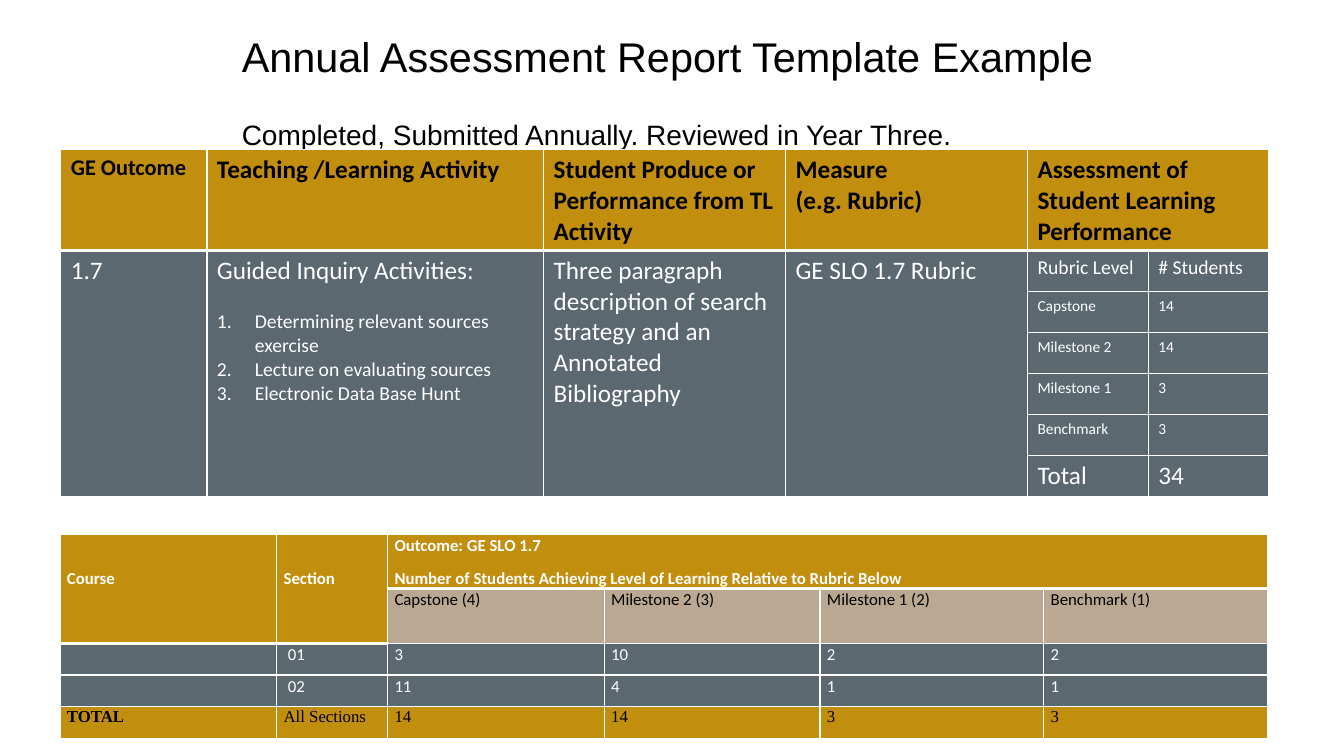
import dataclasses
import typing

import lxml.etree
import pptx
import pptx.dml.color
import pptx.enum.text
import pptx.oxml.ns
import pptx.util

Pt = pptx.util.Pt

GOLD, SLATE, SAND = "C28E0E", "5B6870", "BAA892"
BLACK, WHITE = "000000", "FFFFFF"


@dataclasses.dataclass
class Entry:
    """One table cell; each line of text is a paragraph."""
    row: int
    col: int
    lines: list[str]
    size: float
    fill: str = SLATE
    color: str = WHITE
    bold: bool = False
    font: str = "Calibri"
    rows: int = 1
    cols: int = 1
    steps: list[str] = dataclasses.field(default_factory=list)
    margins: tuple[float, float, float, float] = (7.2, 3.6, 7.2, 3.6)
    line_spacing: float = 1.0
    space_after: float = 0


@dataclasses.dataclass
class Grid:
    left: float
    top: float
    widths: list[float]
    heights: list[float]
    entries: list[Entry]


def rgb(color: str) -> pptx.dml.color.RGBColor:
    return pptx.dml.color.RGBColor.from_string(color)


def style_font(paragraph: typing.Any, name: str, size: float, color: str, bold: bool = False) -> None:
    paragraph.font.name = name
    paragraph.font.size = Pt(size)
    paragraph.font.bold = bold
    paragraph.font.color.rgb = rgb(color)


def add_heading(slide: typing.Any, text: str, left: float, top: float, width: float, height: float,
                size: float, anchor: typing.Any, top_margin: float) -> None:
    frame = slide.shapes.add_textbox(Pt(left), Pt(top), Pt(width), Pt(height)).text_frame
    frame.word_wrap = True
    frame.vertical_anchor = anchor
    frame.margin_top = Pt(top_margin)
    frame.text = text
    style_font(frame.paragraphs[0], "Arial", size, BLACK)


def set_borders(cell: typing.Any, top: float, bottom: float) -> None:
    properties = cell._tc.get_or_add_tcPr()
    for side, width in (("L", 1), ("R", 1), ("T", top), ("B", bottom)):
        line = lxml.etree.SubElement(properties, pptx.oxml.ns.qn(f"a:ln{side}"), w=str(Pt(width)))
        solid = lxml.etree.SubElement(line, pptx.oxml.ns.qn("a:solidFill"))
        lxml.etree.SubElement(solid, pptx.oxml.ns.qn("a:srgbClr"), val=WHITE)


def number_step(paragraph: typing.Any) -> None:
    properties = paragraph._p.get_or_add_pPr()
    properties.set("marL", str(Pt(27)))
    properties.set("indent", str(Pt(-27)))
    numbering = lxml.etree.Element(pptx.oxml.ns.qn("a:buAutoNum"), type="arabicPeriod")
    properties.find(pptx.oxml.ns.qn("a:defRPr")).addprevious(numbering)


def fill_entry(table: typing.Any, entry: Entry) -> None:
    cell = table.cell(entry.row, entry.col)
    if entry.rows * entry.cols > 1:
        cell.merge(table.cell(entry.row + entry.rows - 1, entry.col + entry.cols - 1))
    cell.fill.solid()
    cell.fill.fore_color.rgb = rgb(entry.fill)
    cell.margin_left, cell.margin_top, cell.margin_right, cell.margin_bottom = map(Pt, entry.margins)
    cell.text = "\n".join(entry.lines + entry.steps)
    for index, paragraph in enumerate(cell.text_frame.paragraphs):
        step = index - len(entry.lines)
        is_step = bool(entry.steps) and step >= 0
        paragraph.line_spacing = entry.line_spacing
        paragraph.space_after = Pt(entry.space_after)
        paragraph.space_before = Pt(17 if is_step and step == 0 else 0)
        style_font(paragraph, entry.font, 14 if is_step else entry.size, entry.color, entry.bold)
        if is_step:
            number_step(paragraph)


def add_grid(slide: typing.Any, grid: Grid) -> None:
    table = slide.shapes.add_table(len(grid.heights), len(grid.widths), Pt(grid.left), Pt(grid.top),
                                   Pt(sum(grid.widths)), Pt(sum(grid.heights))).table
    table.first_row = table.horz_banding = False
    for column, width in zip(table.columns, grid.widths):
        column.width = Pt(width)
    for index, (row, height) in enumerate(zip(table.rows, grid.heights)):
        row.height = Pt(height)
        for cell in row.cells:
            set_borders(cell, top=3 if index == 1 else 1, bottom=3 if index == 0 else 1)
    for entry in grid.entries:
        fill_entry(table, entry)


def outcome_grid() -> Grid:
    headers = [["GE Outcome"], ["Teaching /Learning Activity"],
               ["Student Produce or Performance from TL Activity"],
               ["Measure", "(e.g. Rubric)"], ["Assessment of Student Learning Performance"]]
    entries = [Entry(0, col, lines, 16 if col == 0 else 18, GOLD, BLACK, True, cols=2 if col == 4 else 1)
               for col, lines in enumerate(headers)]
    activities = ["Determining relevant sources exercise", "Lecture on evaluating sources",
                  "Electronic Data Base Hunt"]
    details = ["1.7", "Guided Inquiry Activities:",
               "Three paragraph description of search strategy and an Annotated Bibliography",
               "GE SLO 1.7 Rubric"]
    entries += [Entry(1, col, [text], 16 if col == 0 else 18, rows=6, steps=activities if col == 1 else [])
                for col, text in enumerate(details)]
    entries[5].size = 18
    levels = [("Rubric Level", "# Students", 14), ("Capstone", "14", 11), ("Milestone 2", "14", 11),
              ("Milestone 1", "3", 11), ("Benchmark", "3", 11), ("Total", "34", 18)]
    for row, (level, students, size) in enumerate(levels, start=1):
        entries += [Entry(row, 4, [level], size), Entry(row, 5, [students], size)]
    return Grid(43.4, 106.8, [104.4, 240.5, 172.8, 172.8, 86.3, 86.3], [71] + [29.3] * 6, entries)


def section_grid() -> Grid:
    def entry(row: int, col: int, lines: list[str], left: float = 5, top: float = 0,
              **look: typing.Any) -> Entry:
        return Entry(row, col, lines, 12, margins=(left, top, 5, 0), line_spacing=1.07,
                     space_after=8, **look)

    # Headers
    header = {"fill": GOLD, "bold": True}
    entries = [entry(0, col, [text], top=23.7, rows=2, **header)
               for col, text in enumerate(["Course", "Section"])]
    entries.append(entry(0, 2, ["Outcome: GE SLO 1.7",
                                "Number of Students Achieving Level of Learning Relative to Rubric Below"],
                         cols=4, **header))
    levels = ["Capstone (4)", "Milestone 2 (3)", "Milestone 1 (2)", "Benchmark (1)"]
    entries += [entry(1, col, [level], fill=SAND, color=BLACK) for col, level in enumerate(levels, start=2)]

    # Sections and total
    sections = [["", "01", "3", "10", "2", "2"], ["", "02", "11", "4", "1", "1"]]
    for row, values in enumerate(sections, start=2):
        entries += [entry(row, col, [value], left=8 if col == 1 else 5) for col, value in enumerate(values)]
    totals = ["TOTAL", "All Sections", "14", "14", "3", "3"]
    entries += [entry(4, col, [value], fill=GOLD, color=BLACK, bold=col == 0, font="Times New Roman")
                for col, value in enumerate(totals)]
    return Grid(42.8, 381.6, [154.8, 79.2, 154.8, 154.1, 159.8, 159.8], [38.6, 39.2] + [22.6] * 3, entries)


def main() -> None:
    presentation = pptx.Presentation()
    presentation.slide_width, presentation.slide_height = Pt(960), Pt(540)
    slide = presentation.slides.add_slide(presentation.slide_layouts[6])

    # Title and subtitle
    anchors = pptx.enum.text.MSO_ANCHOR
    add_heading(slide, "Annual Assessment Report Template Example", 165.6, 16.6, 634.3, 46,
                29.6, anchors.MIDDLE, 3.6)
    add_heading(slide, "Completed, Submitted Annually. Reviewed in Year Three.", 165.6, 78.5, 633, 25.2,
                20, anchors.TOP, 5.5)

    # Tables
    add_grid(slide, outcome_grid())
    add_grid(slide, section_grid())
    presentation.save("out.pptx")


if __name__ == "__main__":
    main()
